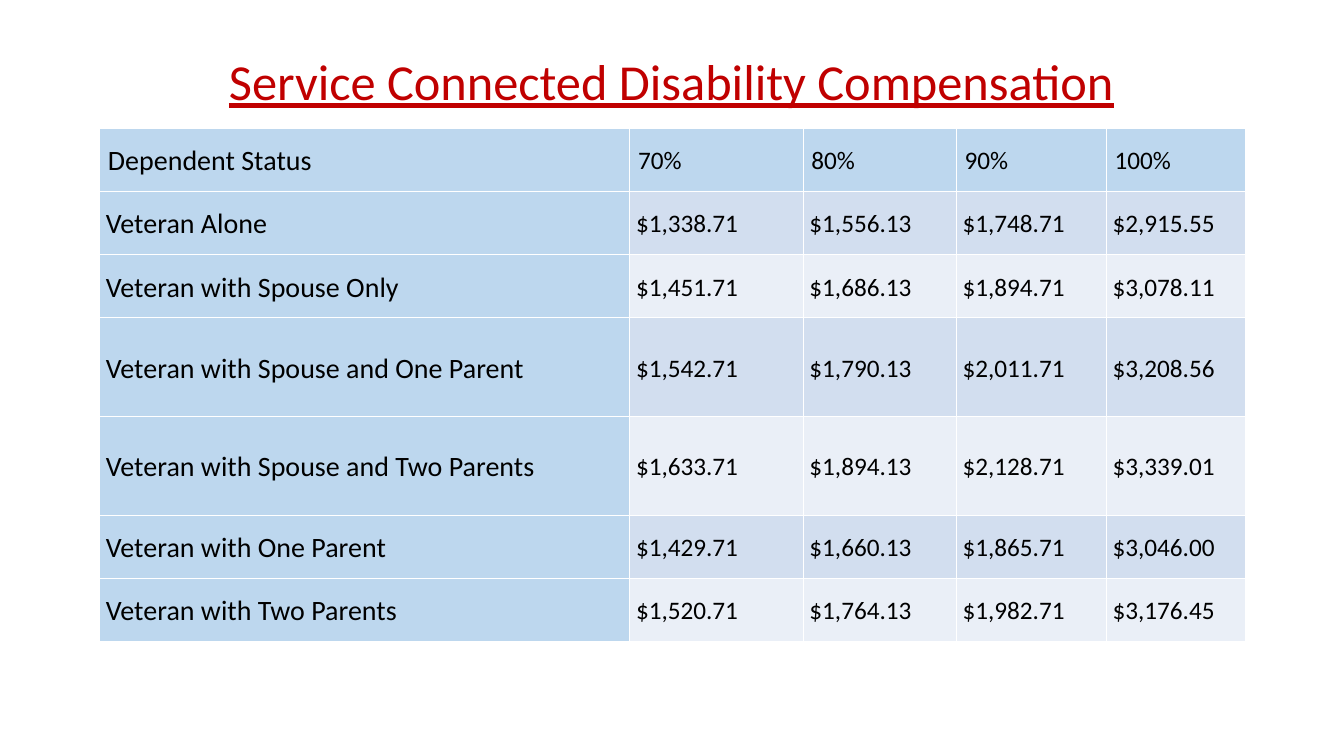
import dataclasses

import lxml.etree
import pptx
import pptx.dml.color
import pptx.enum.text
import pptx.oxml.ns
import pptx.util


@dataclasses.dataclass(frozen=True)
class Theme:
    font: str = "Calibri"
    title_color: str = "C00000"
    text_color: str = "000000"
    heading_fill: str = "BDD7EE"
    band_fills: tuple[str, str] = ("D2DEEF", "EAEFF7")
    border_color: str = "FFFFFF"
    border_width: float = 1
    title_size: float = 36
    label_size: float = 20
    value_size: float = 18


@dataclasses.dataclass(frozen=True)
class RateRow:
    label: str
    values: tuple[str, str, str, str]
    height: float = 1.59
    margin: float = 0.16


THEME = Theme()
COLUMN_WIDTHS = (13.36, 4.37, 3.86, 3.78, 3.51)
TALL_ROW = 2.49
RATE_ROWS = (
    RateRow("Dependent Status", ("70%", "80%", "90%", "100%"), margin=0.21),
    RateRow("Veteran Alone", ("$1,338.71", "$1,556.13", "$1,748.71", "$2,915.55")),
    RateRow("Veteran with Spouse Only", ("$1,451.71", "$1,686.13", "$1,894.71", "$3,078.11")),
    RateRow("Veteran with Spouse and One Parent",
            ("$1,542.71", "$1,790.13", "$2,011.71", "$3,208.56"), TALL_ROW),
    RateRow("Veteran with Spouse and Two Parents",
            ("$1,633.71", "$1,894.13", "$2,128.71", "$3,339.01"), TALL_ROW),
    RateRow("Veteran with One Parent", ("$1,429.71", "$1,660.13", "$1,865.71", "$3,046.00")),
    RateRow("Veteran with Two Parents", ("$1,520.71", "$1,764.13", "$1,982.71", "$3,176.45")),
)


def write_text(text_frame, text: str, *, size: float, color: str = THEME.text_color,
               underline: bool = False, alignment=pptx.enum.text.PP_ALIGN.LEFT,
               line_spacing: float = 1.07, space_after: float = 0) -> None:
    paragraph = text_frame.paragraphs[0]
    paragraph.alignment = alignment
    paragraph.line_spacing = line_spacing
    paragraph.space_before = pptx.util.Pt(0)
    paragraph.space_after = pptx.util.Pt(space_after)
    run = paragraph.add_run()
    run.text = text
    run.font.name = THEME.font
    run.font.size = pptx.util.Pt(size)
    run.font.underline = underline
    run.font.color.rgb = pptx.dml.color.RGBColor.from_string(color)


def add_borders(cell) -> None:
    properties = cell._tc.get_or_add_tcPr()
    qualified = pptx.oxml.ns.qn
    for side in ("a:lnL", "a:lnR", "a:lnT", "a:lnB"):
        line = lxml.etree.SubElement(properties, qualified(side))
        line.set("w", str(pptx.util.Pt(THEME.border_width)))
        fill = lxml.etree.SubElement(line, qualified("a:solidFill"))
        lxml.etree.SubElement(fill, qualified("a:srgbClr")).set("val", THEME.border_color)


def draw_cell(cell, text: str, *, size: float, fill: str, margin: float) -> None:
    cell.margin_left = cell.margin_right = pptx.util.Cm(margin)
    cell.margin_top = cell.margin_bottom = pptx.util.Cm(0.15)
    cell.vertical_anchor = pptx.enum.text.MSO_ANCHOR.MIDDLE
    add_borders(cell)
    cell.fill.solid()
    cell.fill.fore_color.rgb = pptx.dml.color.RGBColor.from_string(fill)
    write_text(cell.text_frame, text, size=size, space_after=15)


def draw_title(slide) -> None:
    title = slide.shapes.title
    title.left, title.top = pptx.util.Cm(2.51), pptx.util.Cm(1.3)
    title.width, title.height = pptx.util.Cm(28.83), pptx.util.Cm(2.88)
    title.text_frame.word_wrap = True
    title.text_frame.auto_size = pptx.enum.text.MSO_AUTO_SIZE.NONE
    title.text_frame.vertical_anchor = pptx.enum.text.MSO_ANCHOR.TOP
    write_text(title.text_frame, "Service Connected Disability Compensation",
               size=THEME.title_size, color=THEME.title_color, underline=True,
               alignment=pptx.enum.text.PP_ALIGN.CENTER, line_spacing=0.9)


def draw_rates(slide) -> None:
    table = slide.shapes.add_table(
        len(RATE_ROWS), len(COLUMN_WIDTHS), pptx.util.Cm(2.51), pptx.util.Cm(3.24),
        pptx.util.Cm(sum(COLUMN_WIDTHS)),
        pptx.util.Cm(sum(rate.height for rate in RATE_ROWS))).table
    table.first_row = True
    table.horz_banding = False
    for column, width in zip(table.columns, COLUMN_WIDTHS):
        column.width = pptx.util.Cm(width)
    for row_index, rate in enumerate(RATE_ROWS):
        table.rows[row_index].height = pptx.util.Cm(rate.height)
        for column_index, text in enumerate((rate.label, *rate.values)):
            is_heading = row_index == 0 or column_index == 0
            draw_cell(
                table.cell(row_index, column_index), text, margin=rate.margin,
                size=THEME.label_size if column_index == 0 else THEME.value_size,
                fill=THEME.heading_fill if is_heading else THEME.band_fills[(row_index - 1) % 2])


def main() -> None:
    presentation = pptx.Presentation()
    presentation.slide_width = pptx.util.Cm(33.87)
    presentation.slide_height = pptx.util.Cm(19.05)
    slide = presentation.slides.add_slide(presentation.slide_layouts.get_by_name("Title Only"))
    draw_title(slide)
    draw_rates(slide)
    presentation.save("out.pptx")


if __name__ == "__main__":
    main()
